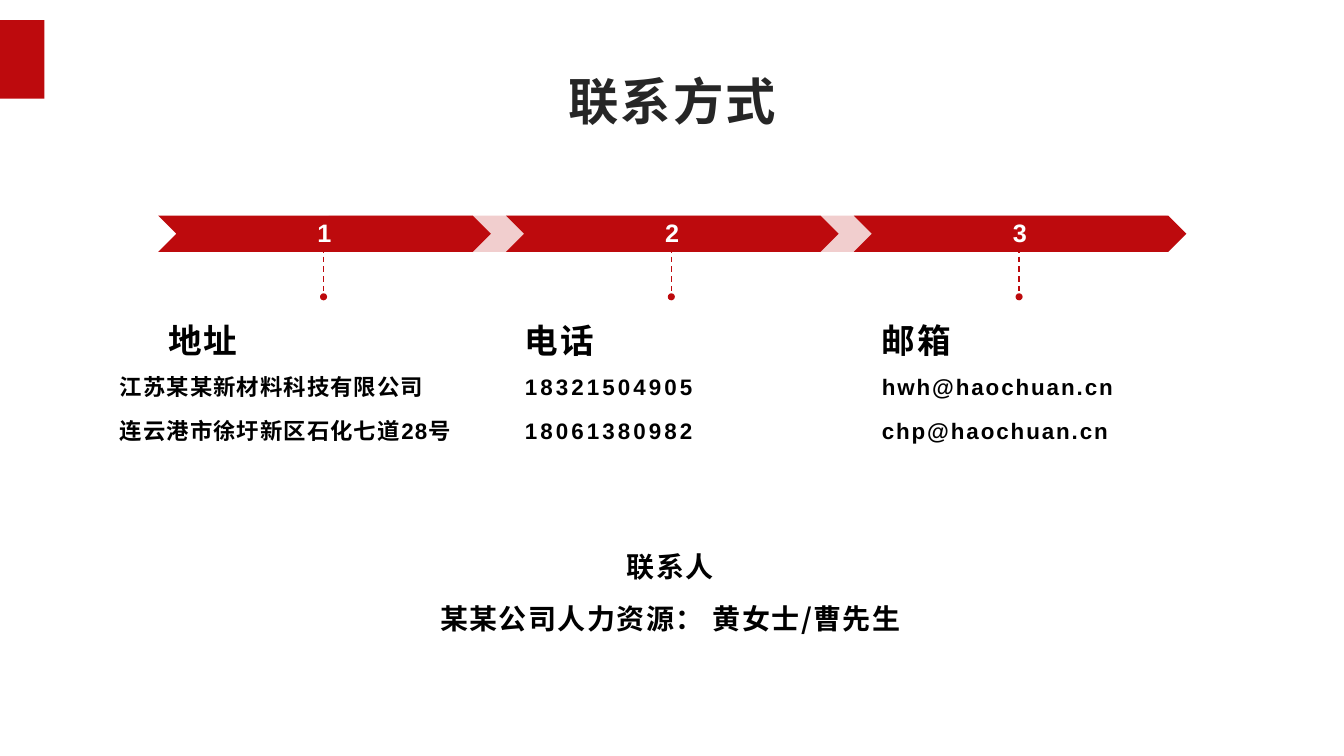
from pptx import Presentation, util as u
from pptx.dml.color import RGBColor
from pptx.enum import dml, shapes, text
from pptx.oxml.ns import qn
from lxml import etree

# The grid has ten columns and ten rows to the inch
CELL = 91440
WIDE, HIGH = 133.33, 75
RED, WHITE, BLACK, DARK = "BD0A0D", "FFFFFF", "000000", "262626"
CJK = "Noto Sans CJK SC"

CONTACTS = [
    ("地址", ["江苏某某新材料科技有限公司", "连云港市徐圩新区石化七道28号"], 0.8),
    ("电话", ["18321504905", "18061380982"], 2.2),
    ("邮箱", ["hwh@haochuan.cn", "chp@haochuan.cn"], 1.4),
]


def grid(*cells):
    return [u.Emu(round(cell * CELL)) for cell in cells]


def paint(color_format, color):
    color_format.rgb = RGBColor.from_string(color)


def fill_shape(shape, color, opacity=100):
    shape.shadow.inherit = False
    shape.fill.solid()
    paint(shape.fill.fore_color, color)
    shape.line.fill.background()
    if opacity < 100:
        tint = shape.fill._xPr.find(".//" + qn("a:srgbClr"))
        etree.SubElement(tint, qn("a:alpha"), val=str(opacity * 1000))


def write(box, lines, size, color=BLACK, font="Arial", tracking=1.0, align=None,
          anchor=text.MSO_ANCHOR.TOP, insets=(1, 0.5, 1, 0.5), leading=1.0, after=0):
    frame = box.text_frame
    frame.word_wrap = True
    frame.auto_size = text.MSO_AUTO_SIZE.NONE
    frame.vertical_anchor = anchor
    (frame.margin_left, frame.margin_top,
     frame.margin_right, frame.margin_bottom) = grid(*insets)
    frame.text = "\n".join(lines)
    for para in frame.paragraphs:
        para.alignment = align
        para.line_spacing = leading
        para.space_before, para.space_after = u.Pt(0), u.Pt(after)
        for span in para.runs:
            span.font.size, span.font.bold, span.font.name = u.Pt(size), True, font
            paint(span.font.color, color)
            props = span._r.get_or_add_rPr()
            props.set("spc", str(round(tracking * 100)))
            etree.SubElement(props, qn("a:ea"), typeface=CJK)


def add_text(page, box, lines, size, **style):
    write(page.shapes.add_textbox(*grid(*box)), lines, size, **style)


def place(holder, box):
    holder.left, holder.top, holder.width, holder.height = grid(*box)
    return holder


def add_outline(page, points, color, opacity=100):
    builder = page.shapes.build_freeform(*grid(*points[0]))
    builder.add_line_segments([grid(*point) for point in points[1:]], close=True)
    fill_shape(builder.convert_to_shape(), color, opacity)


def add_heading(page, box):
    # Corner block and centred title
    corner = page.shapes.add_shape(shapes.MSO_SHAPE.RECTANGLE, *grid(0, 2, 4.4, 7.8))
    fill_shape(corner, RED)
    write(place(page.shapes.title, box), ["联系方式"], 36, color=DARK, font=CJK,
          tracking=1.6, align=text.PP_ALIGN.CENTER, insets=(0.7, 0.3, 0.7, 0.3))


def add_step(page, box, number):
    left, top, width, height = box
    right, middle, bottom = left + width, top + height / 2, top + height
    tip, center = height / 2, left + 16.4
    # Arrow with a notched tail
    add_outline(page, [(left, top), (right - tip, top), (right, middle),
                       (right - tip, bottom), (left, bottom), (left + tip, middle)], RED)
    # Dashed drop line ending in a dot
    drop = page.shapes.add_connector(shapes.MSO_CONNECTOR.STRAIGHT,
                                     *grid(center, bottom - 0.5, center, bottom + 4.1))
    paint(drop.line.color, RED)
    drop.line.width = u.Pt(1)
    drop.line.dash_style = dml.MSO_LINE.DASH
    etree.SubElement(drop._element.spPr, qn("a:effectLst"))
    dot = page.shapes.add_shape(shapes.MSO_SHAPE.OVAL,
                                *grid(center - 0.35, bottom + 4.1, 0.7, 0.7))
    fill_shape(dot, RED)
    add_text(page, (center - 1.6, top - 0.3, 3.5, 4.1), [str(number)], 18, color=WHITE)


def add_steps(page, box):
    left, top, width, height = box
    arrow, tip = 33, height / 2
    pitch = (width - arrow) / (len(CONTACTS) - 1)
    # Pale band behind the arrows
    right, bottom = left + width - 0.2, top + height
    add_outline(page, [(left + 16.9, top), (right - tip, top), (right, top + tip),
                       (right - tip, bottom), (left + 16.9, bottom)], RED, opacity=20)
    for index in range(len(CONTACTS)):
        add_step(page, (left + index * pitch, top, arrow, height), index + 1)


def add_details(page, box):
    left, top, width, height = box
    column = 31
    pitch = (width - column) / (len(CONTACTS) - 1)
    for index, (heading, lines, tracking) in enumerate(CONTACTS):
        x = left + index * pitch
        outdent = 4.8 if index == 0 else 0  # the address needs a wider column
        add_text(page, (x, top, column, 4.8), [heading], 24, tracking=1.6,
                 anchor=text.MSO_ANCHOR.BOTTOM, insets=(1, 0.5, 1, 0))
        add_text(page, (x - outdent, top + 5.6, column + outdent, height - 5.6), lines, 16,
                 tracking=tracking, insets=(1, 0, 1, 0.5), leading=1.2, after=8)


def add_people(page, box):
    body = place(page.placeholders[1], box)
    write(body, ["联系人", "某某公司人力资源： 黄女士/曹先生"], 20, font=CJK,
          align=text.PP_ALIGN.CENTER, anchor=text.MSO_ANCHOR.MIDDLE,
          insets=(0.7, 0.3, 0.7, 0.3), leading=1.2, after=8)
    # Plain centred lines without bullets
    for para in body.text_frame.paragraphs:
        props = para._p.get_or_add_pPr()
        props.set("marL", "0")
        props.set("indent", "0")
        etree.SubElement(props, qn("a:buNone"))


def main():
    deck = Presentation()
    deck.slide_width, deck.slide_height = grid(WIDE, HIGH)
    page = deck.slides.add_slide(deck.slide_layouts[1])
    add_heading(page, (6.7, 6.7, 120, 7.5))
    add_steps(page, (15.7, 21.4, 102, 3.6))
    add_details(page, (15.7, 30.9, 101.8, 21.1))
    add_people(page, (6.5, 53.4, 120, 10.1))
    deck.save("out.pptx")


if __name__ == "__main__":
    main()
